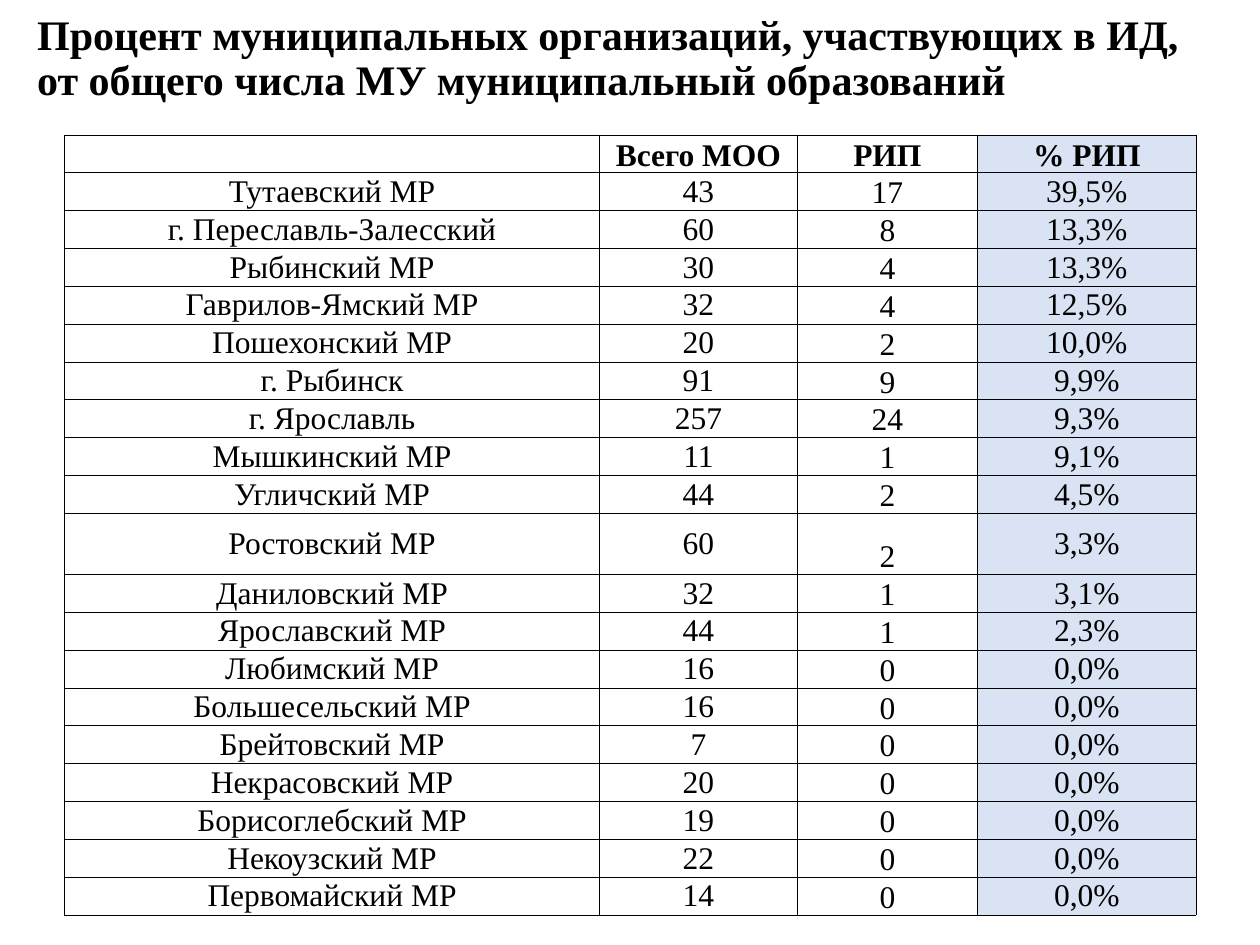
from lxml.etree import SubElement
from pptx import Presentation
from pptx.dml.color import RGBColor
from pptx.enum.text import MSO_ANCHOR as Anchor, PP_ALIGN as Align
from pptx.oxml.ns import qn
from pptx.util import Cm, Pt

BLACK = RGBColor(0, 0, 0)
WHITE = RGBColor(255, 255, 255)
PALE_BLUE = RGBColor(0xDA, 0xE3, 0xF3)
FONT = "Times New Roman"

HEADERS = ["", "Всего МОО", "РИП", "% РИП"]
DISTRICTS = [
    ("Тутаевский МР", 43, 17),
    ("г. Переславль-Залесский", 60, 8),
    ("Рыбинский МР", 30, 4),
    ("Гаврилов-Ямский МР", 32, 4),
    ("Пошехонский МР", 20, 2),
    ("г. Рыбинск", 91, 9),
    ("г. Ярославль", 257, 24),
    ("Мышкинский МР", 11, 1),
    ("Угличский МР", 44, 2),
    ("Ростовский МР", 60, 2),
    ("Даниловский МР", 32, 1),
    ("Ярославский МР", 44, 1),
    ("Любимский МР", 16, 0),
    ("Большесельский МР", 16, 0),
    ("Брейтовский МР", 7, 0),
    ("Некрасовский МР", 20, 0),
    ("Борисоглебский МР", 19, 0),
    ("Некоузский МР", 22, 0),
    ("Первомайский МР", 14, 0),
]
COLUMN_WIDTHS = [10.79, 3.98, 3.64, 4.4]
TABLE_HEIGHT = 15.38
TALL_ROW, TALL_HEIGHT = 10, 1.23


def style_text(para, size, bold):
    for span in para.runs:
        span.font.name = FONT
        span.font.size = Pt(size)
        span.font.bold = bold
        span.font.color.rgb = BLACK


def add_borders(cell):
    properties = cell._tc.get_or_add_tcPr()
    for side in ("lnL", "lnR", "lnT", "lnB"):
        line = SubElement(properties, qn(f"a:{side}"), w=str(Pt(0.5)))
        fill = SubElement(line, qn("a:solidFill"))
        SubElement(fill, qn("a:srgbClr"), val=str(BLACK))


deck = Presentation()
deck.slide_width, deck.slide_height = Cm(25.4), Cm(19.05)
page = deck.slides.add_slide(deck.slide_layouts[6])

# Title
title = page.shapes.add_textbox(Cm(0.5), Cm(-0.05), Cm(24), Cm(2.5)).text_frame
title.word_wrap = True
title.vertical_anchor = Anchor.MIDDLE
title.text = ("Процент муниципальных организаций, участвующих в ИД, "
              "от общего числа МУ муниципальный образований")
title.paragraphs[0].line_spacing = 0.9
style_text(title.paragraphs[0], 24, True)

# Table
rows = [HEADERS]
for name, total, sites in DISTRICTS:
    percent = f"{sites / total:.1%}".replace(".", ",")
    rows.append([name, str(total), str(sites), percent])

table = page.shapes.add_table(
    len(rows), len(HEADERS), Cm(1.3), Cm(2.72),
    Cm(sum(COLUMN_WIDTHS)), Cm(TABLE_HEIGHT)).table
table.first_row = False
table.horz_banding = False

for column, width in zip(table.columns, COLUMN_WIDTHS):
    column.width = Cm(width)
row_height = (TABLE_HEIGHT - TALL_HEIGHT) / (len(rows) - 1)
for index, row in enumerate(table.rows):
    row.height = Cm(TALL_HEIGHT if index == TALL_ROW else row_height)

for row_index, values in enumerate(rows):
    is_header = row_index == 0
    for column_index, value in enumerate(values):
        cell = table.cell(row_index, column_index)
        cell.margin_left = cell.margin_right = 0
        cell.margin_top = cell.margin_bottom = 0
        at_bottom = is_header or column_index == 2
        cell.vertical_anchor = Anchor.BOTTOM if at_bottom else Anchor.MIDDLE
        add_borders(cell)
        cell.fill.solid()
        cell.fill.fore_color.rgb = PALE_BLUE if column_index == 3 else WHITE
        para = cell.text_frame.paragraphs[0]
        para.text = value
        para.alignment = Align.CENTER
        style_text(para, 18, is_header)

deck.save("out.pptx")
